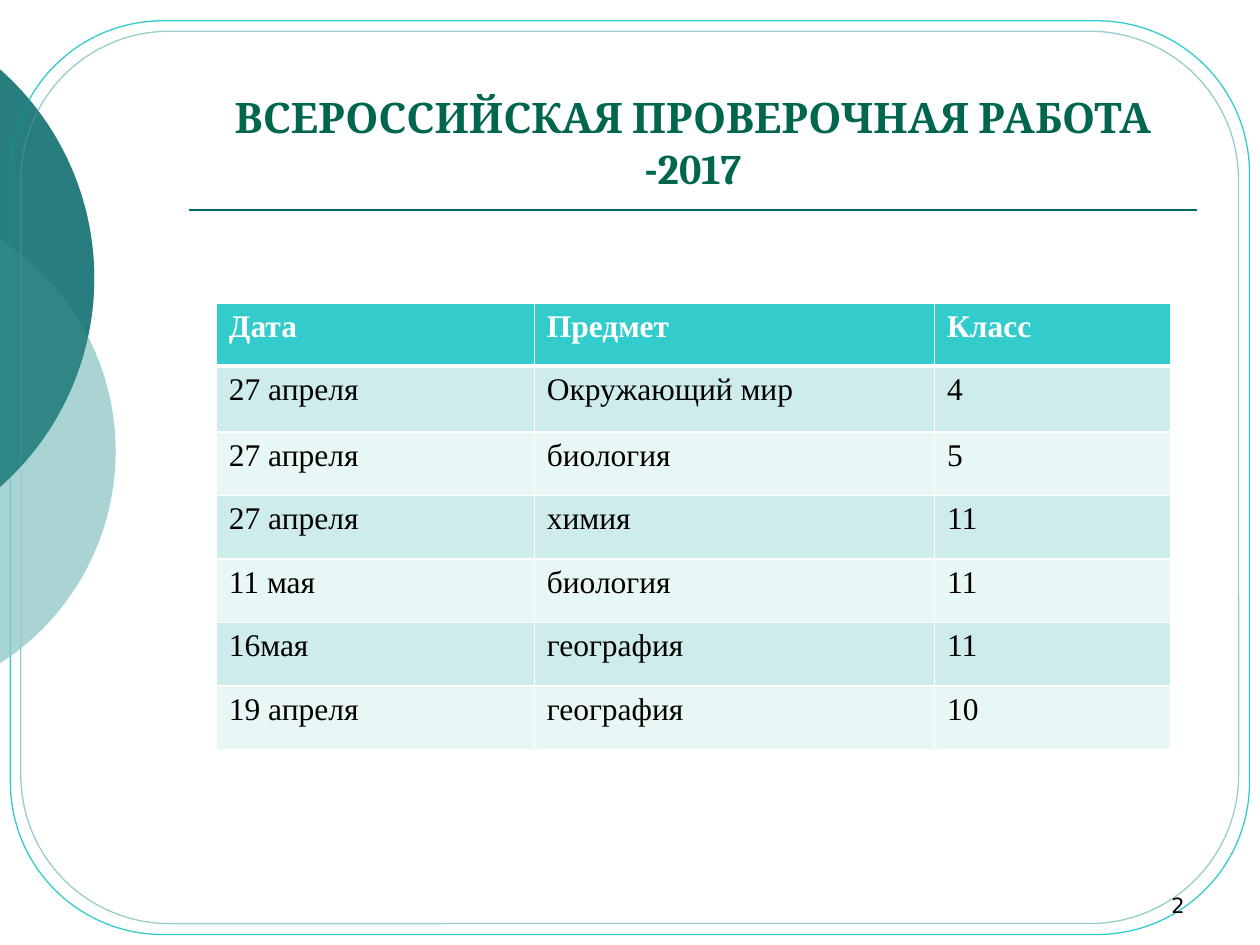
"""Builds the slide with the timetable of the 2017 all-Russian test."""
import math

from lxml import etree
from pptx import Presentation
from pptx import util as u
from pptx.dml.color import RGBColor
from pptx.enum import shapes, text
from pptx.oxml.ns import qn

TEAL, PALE, AQUA = "006666", "99CCCC", "33CCCC"
WHITE, BLACK = "FFFFFF", "000000"
SERIF = "Times New Roman"
FRAMES = [(0.21, 0.42, 24.98, 18.42, AQUA), (0.42, 0.63, 24.55, 17.99, PALE)]
DISCS = [(-2.75, 9.1, 5.08, PALE, 58), (-3.71, 5.61, 5.61, TEAL, 60)]
COLUMNS = [6.41, 8.07, 4.77]
HEIGHTS = [1.27, 1.33] + [1.28] * 5
ROWS = [
    ("Дата", "Предмет", "Класс"),
    ("27 апреля", "Окружающий мир", "4"),
    ("27 апреля", "биология", "5"),
    ("27 апреля", "химия", "11"),
    ("11 мая", "биология", "11"),
    ("16мая", "география", "11"),
    ("19 апреля", "география", "10"),
]


def rgb(value):
    return RGBColor.from_string(value)


class Deck:
    def __init__(self):
        self.prs = Presentation()
        self.prs.slide_width, self.prs.slide_height = u.Cm(25.4), u.Cm(19.05)
        self.s = self.prs.slides.add_slide(self.prs.slide_layouts[5])

    def style(self, tf, size, font, color, bold=False, align=None):
        for p in tf.paragraphs:
            p.alignment = align
            for r in p.runs:
                r.font.size, r.font.name, r.font.bold = u.Pt(size), font, bold
                r.font.color.rgb = rgb(color)

    def title(self, words, x, y, w, h):
        sp = self.s.shapes.title
        sp.left, sp.top, sp.width, sp.height = map(u.Cm, (x, y, w, h))
        tf = sp.text_frame
        tf.text = words
        tf.vertical_anchor = text.MSO_ANCHOR.BOTTOM
        self.style(tf, 24, "Cambria", "00664D", True, text.PP_ALIGN.CENTER)

    def number(self, words, x, y, w, h):
        tf = self.s.shapes.add_textbox(*map(u.Cm, (x, y, w, h))).text_frame
        tf.word_wrap = True
        tf.text = words
        tf.vertical_anchor = text.MSO_ANCHOR.BOTTOM
        self.style(tf, 12, "DejaVu Sans", BLACK, align=text.PP_ALIGN.RIGHT)

    def disc(self, cx, cy, radius, color, opacity):
        """Draws the part of a circle that lies right of the slide's left edge."""
        limit = math.acos(-cx / radius)
        x, y = radius * math.cos(limit), radius * math.sin(limit)
        k = 4 / 3 * math.tan(limit / 4)
        start = (x, -y)
        upper = [(x + k * y, -y + k * x), (radius, -k * radius), (radius, 0)]
        lower = [(radius, k * radius), (x + k * y, y - k * x), (x, y)]
        builder = self.s.shapes.build_freeform(0, 0)
        builder.add_line_segments([(u.Cm(radius), u.Cm(radius))], close=True)
        sp = builder.convert_to_shape()
        sp.left, sp.top = u.Cm(cx - radius), u.Cm(cy - radius)
        sp.width = sp.height = u.Cm(2 * radius)
        outline = sp._element.find(".//" + qn("a:path"))
        outline.clear()
        outline.set("w", str(sp.width))
        outline.set("h", str(sp.height))
        for tag, points in (("moveTo", [start]), ("cubicBezTo", upper),
                            ("cubicBezTo", lower), ("close", [])):
            step = etree.SubElement(outline, qn("a:" + tag))
            for px, py in points:
                etree.SubElement(step, qn("a:pt"), x=str(u.Cm(px + radius)),
                                 y=str(u.Cm(py + radius)))
        sp.shadow.inherit = False
        sp.line.fill.background()
        sp.fill.solid()
        sp.fill.fore_color.rgb = rgb(color)
        clr = sp._element.spPr.find(qn("a:solidFill"))[0]
        etree.SubElement(clr, qn("a:alpha"), val=str(opacity * 1000))

    def frame(self, x, y, w, h, color):
        sp = self.s.shapes.add_shape(shapes.MSO_SHAPE.ROUNDED_RECTANGLE,
                                     *map(u.Cm, (x, y, w, h)))
        sp.shadow.inherit = False
        sp.fill.background()
        sp.line.color.rgb, sp.line.width = rgb(color), u.Pt(0.75)

    def rule(self, x1, x2, y):
        sp = self.s.shapes.add_connector(shapes.MSO_CONNECTOR.STRAIGHT,
                                         *map(u.Cm, (x1, y, x2, y)))
        sp.line.color.rgb, sp.line.width = rgb(TEAL), u.Pt(1)
        etree.SubElement(sp._element.spPr, qn("a:effectLst"))

    def borders(self, cell, row):
        tc_pr = cell._tc.get_or_add_tcPr()
        thick = {(0, "B"), (1, "T")}
        for side in "LRTB":
            width = u.Pt(3 if (row, side) in thick else 1)
            ln = etree.SubElement(tc_pr, qn("a:ln" + side), w=str(width))
            fill = etree.SubElement(ln, qn("a:solidFill"))
            etree.SubElement(fill, qn("a:srgbClr"), val=WHITE)

    def table(self, x, y):
        box = map(u.Cm, (x, y, sum(COLUMNS), sum(HEIGHTS)))
        tbl = self.s.shapes.add_table(len(ROWS), len(COLUMNS), *box).table
        for column, width in zip(tbl.columns, COLUMNS):
            column.width = u.Cm(width)
        for i, (row, height, words) in enumerate(zip(tbl.rows, HEIGHTS, ROWS)):
            row.height = u.Cm(height)
            head = i == 0
            color = AQUA if head else ("E8F6F6", "CEECEC")[i % 2]
            for cell, word in zip(row.cells, words):
                cell.text_frame.text = word
                self.borders(cell, i)
                cell.fill.solid()
                cell.fill.fore_color.rgb = rgb(color)
                self.style(cell.text_frame, 18, SERIF, WHITE if head else BLACK, head)

    def discs(self):
        for disc in DISCS:
            self.disc(*disc)


def main():
    deck = Deck()
    deck.discs()
    for frame in FRAMES:
        deck.frame(*frame)
    deck.rule(3.81, 24.13, 4.23)
    deck.discs()
    deck.title("ВСЕРОССИЙСКАЯ ПРОВЕРОЧНАЯ РАБОТА -2017", 3.81, 0.84, 20.32, 3.17)
    deck.number("2", 18.2, 17.36, 5.93, 1.27)
    deck.table(4.36, 6.11)
    deck.prs.save("out.pptx")


if __name__ == "__main__":
    main()
